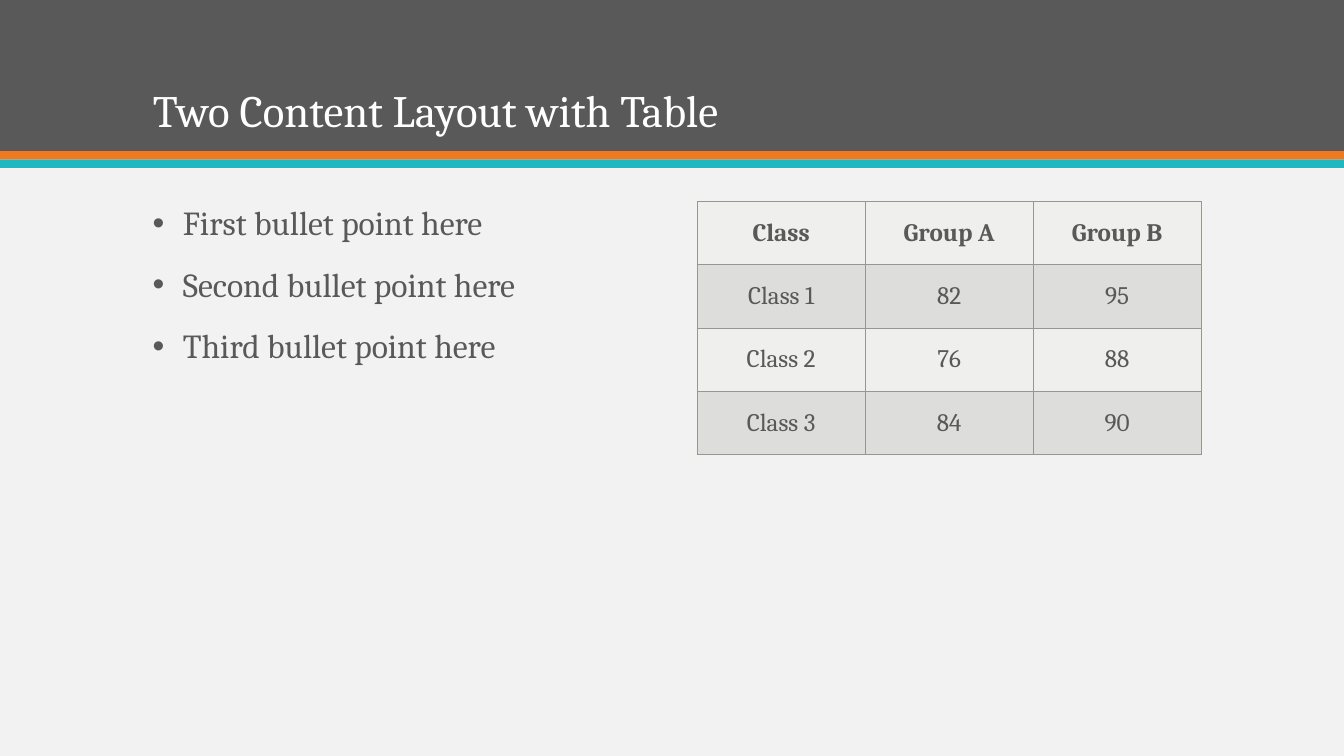
from lxml import etree
from pptx import Presentation
from pptx import util as u
from pptx.dml import color
from pptx.enum import shapes, text
from pptx.oxml import ns


def rgb(code):
    """Turn a hex string into a colour."""
    return color.RGBColor.from_string(code)


class Deck:
    """Hold the style and the current slide."""

    font = "Cambria"
    dark, light, white = "595959", "F2F2F2", "FFFFFF"
    orange, teal = "EF7920", "1EB8C1"
    border, stripes = "969890", ("EFEFEE", "DDDDDB")
    margin, content_top, content_width = 102, 144, 756

    def __init__(self):
        """Open a wide presentation with one title-only slide."""
        self.file = Presentation()
        self.file.slide_width, self.file.slide_height = u.Pt(960), u.Pt(540)
        self.slide = self.file.slides.add_slide(self.file.slide_layouts[5])
        fill = self.slide.background.fill
        fill.solid()
        fill.fore_color.rgb = rgb(self.light)

    def style(self, paragraph, size, code, bold=False):
        """Format every run of a paragraph."""
        for run in paragraph.runs:
            run.font.name, run.font.size, run.font.bold = self.font, u.Pt(size), bold
            run.font.color.rgb = rgb(code)

    def band(self, top, height, code):
        """Draw a full-width stripe."""
        stripe = self.slide.shapes.add_shape(
            shapes.MSO_SHAPE.RECTANGLE, 0, u.Pt(top), self.file.slide_width, u.Pt(height))
        stripe.shadow.inherit = False
        stripe.fill.solid()
        stripe.fill.fore_color.rgb = rgb(code)
        stripe.line.fill.background()

    def title(self, words):
        """Place the title in front of the stripes."""
        heading = self.slide.shapes.title
        heading.element.getparent().append(heading.element)
        heading.left, heading.top = u.Pt(self.margin), u.Pt(20.4)
        heading.width, heading.height = u.Pt(self.content_width), u.Pt(81)
        frame = heading.text_frame
        frame.text = words
        frame.auto_size = text.MSO_AUTO_SIZE.NONE
        frame.vertical_anchor = text.MSO_ANCHOR.BOTTOM
        line = frame.paragraphs[0]
        line.alignment, line.line_spacing = text.PP_ALIGN.LEFT, 0.9
        self.style(line, 32, self.white)

    def bullets(self, points):
        """Write a bulleted list."""
        body = self.slide.shapes.add_textbox(
            u.Pt(self.margin), u.Pt(self.content_top), u.Pt(self.content_width), u.Pt(342))
        frame = body.text_frame
        frame.word_wrap = True
        frame.text = "\n".join(points)
        for point in frame.paragraphs:
            point.line_spacing, point.space_before = 0.9, u.Pt(18)
            self.style(point, 24, self.dark)
            props = point._p.get_or_add_pPr()
            props.set("marL", str(u.Pt(21.6)))
            props.set("indent", str(-u.Pt(21.6)))
            etree.SubElement(props, ns.qn("a:buFont")).set("typeface", "Arial")
            etree.SubElement(props, ns.qn("a:buChar")).set("char", "•")

    def outline(self, cell):
        """Give a cell thin borders on all four sides."""
        props = cell._tc.get_or_add_tcPr()
        for place, side in enumerate(("lnL", "lnR", "lnT", "lnB")):
            edge = etree.Element(ns.qn("a:" + side), w=str(u.Pt(1)))
            fill = etree.SubElement(edge, ns.qn("a:solidFill"))
            etree.SubElement(fill, ns.qn("a:srgbClr")).set("val", self.border)
            props.insert(place, edge)

    def table(self, rows, left, width, row_height):
        """Draw a striped table with a bold header."""
        grid = self.slide.shapes.add_table(
            len(rows), len(rows[0]), u.Pt(left), u.Pt(self.content_top),
            u.Pt(width), u.Pt(row_height * len(rows))).table
        for r, row in enumerate(rows):
            for c, entry in enumerate(row):
                cell = grid.cell(r, c)
                cell.text_frame.text = entry
                cell.vertical_anchor = text.MSO_ANCHOR.MIDDLE
                cell.fill.solid()
                cell.fill.fore_color.rgb = rgb(self.stripes[r % 2])
                line = cell.text_frame.paragraphs[0]
                line.alignment = text.PP_ALIGN.CENTER
                self.style(line, 18, self.dark, bold=r == 0)
                self.outline(cell)


def main():
    """Build the slide and save it."""
    deck = Deck()
    deck.band(0, 108, deck.dark)
    deck.band(108, 6, deck.orange)
    deck.band(114, 6, deck.teal)
    deck.title("Two Content Layout with Table")
    deck.bullets([f"{order} bullet point here" for order in ("First", "Second", "Third")])
    scores = [
        ("Class", "Group A", "Group B"),
        ("Class 1", "82", "95"),
        ("Class 2", "76", "88"),
        ("Class 3", "84", "90"),
    ]
    deck.table(scores, left=498, width=360, row_height=45.2)
    deck.file.save("out.pptx")


if __name__ == "__main__":
    main()
